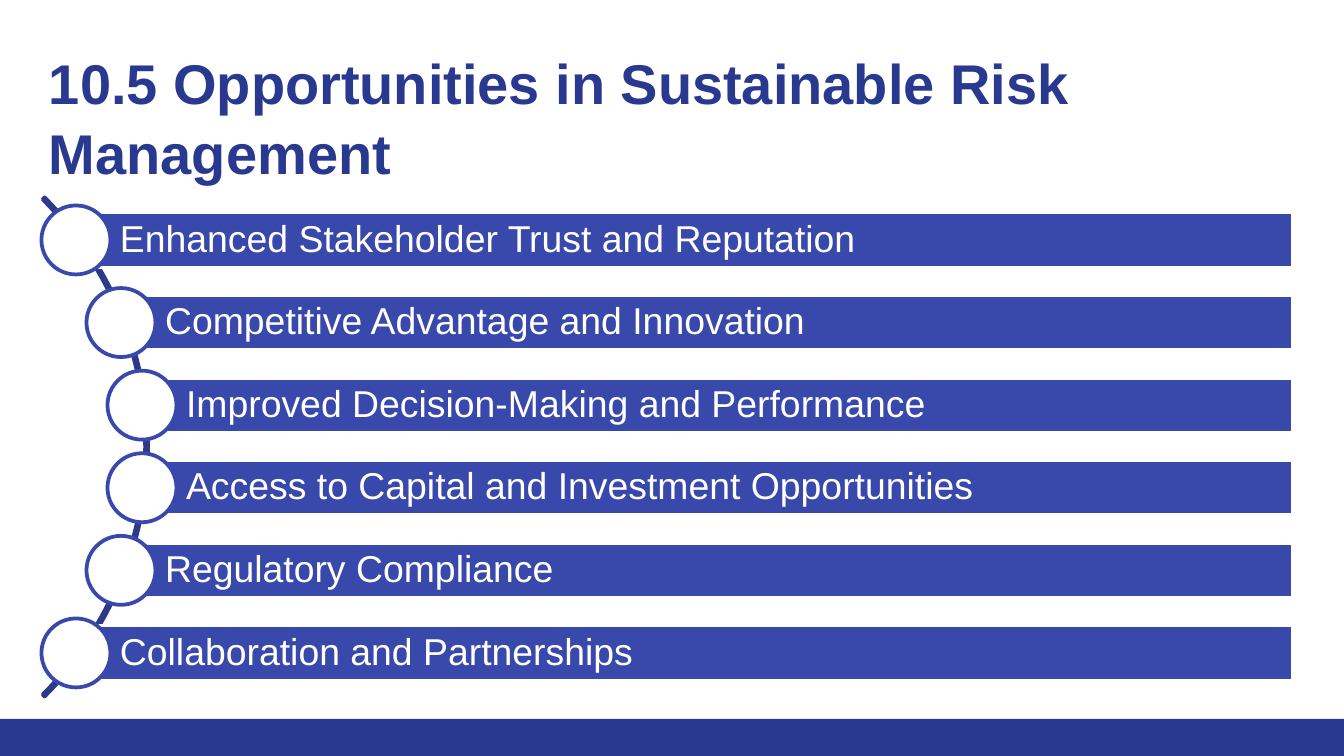
from pptx import Presentation
from pptx.dml.color import RGBColor
from pptx.enum.shapes import MSO_SHAPE
from pptx.enum.text import MSO_ANCHOR, MSO_AUTO_SIZE, PP_ALIGN
from pptx.util import Emu, Pt

RECT, OVAL, ARC = MSO_SHAPE.RECTANGLE, MSO_SHAPE.OVAL, MSO_SHAPE.BLOCK_ARC
TOP, MIDDLE = MSO_ANCHOR.TOP, MSO_ANCHOR.MIDDLE
LEFT = PP_ALIGN.LEFT
NO_FIT = MSO_AUTO_SIZE.NONE

NAVY = RGBColor(0x2A, 0x39, 0x90)
ARC_BLUE = RGBColor(0x2E, 0x3A, 0x89)
BLUE = RGBColor(0x39, 0x49, 0xAB)
WHITE = RGBColor(0xFF, 0xFF, 0xFF)

FONT = "Arial"
EMU_PER_PX = 914400 / 134.4
WIDTH, HEIGHT = 1344, 756

TITLE = "10.5 Opportunities in Sustainable Risk Management"
OPPORTUNITIES = [
    ("Enhanced Stakeholder Trust and Reputation", 76),
    ("Competitive Advantage and Innovation", 121),
    ("Improved Decision-Making and Performance", 142),
    ("Access to Capital and Investment Opportunities", 142),
    ("Regulatory Compliance", 121),
    ("Collaboration and Partnerships", 76),
]
FIRST_CENTER, LAST_CENTER = 240, 653
BAR_RIGHT, BAR_HEIGHT = 1293, 55
CIRCLE = 69


def px(n):
    return Emu(round(n * EMU_PER_PX))


def add_shape(s, kind, x, y, w, h, fill, line=None):
    sp = s.shapes.add_shape(kind, px(x), px(y), px(w), px(h))
    sp.shadow.inherit = False
    sp.fill.solid()
    sp.fill.fore_color.rgb = fill
    if line is None:
        sp.line.fill.background()
    else:
        sp.line.color.rgb = line
        sp.line.width = Pt(2)
    return sp


def set_text(sp, text, size, color, bold, anchor, margins, spacing):
    tf = sp.text_frame
    tf.word_wrap = True
    tf.auto_size = NO_FIT
    tf.vertical_anchor = anchor
    tf.margin_left, tf.margin_top, tf.margin_right, tf.margin_bottom = map(px, margins)
    p = tf.paragraphs[0]
    p.text = text
    p.alignment = LEFT
    p.line_spacing = spacing
    p.font.name = FONT
    p.font.size = Pt(size)
    p.font.bold = bold
    p.font.color.rgb = color


def add_title(s):
    sp = s.shapes.title
    sp.left, sp.top, sp.width, sp.height = map(px, (36, 27, 1236, 120))
    set_text(sp, TITLE, 30, NAVY, True, TOP, (13, 19, 13, 13), 1.04)


def add_arc(s):
    sp = add_shape(s, ARC, -558, 94, 706, 706, ARC_BLUE, ARC_BLUE)
    for i, value in enumerate((189, 27, 0.004)):
        sp.adjustments[i] = value


def add_opportunity(s, text, x, y):
    bar = add_shape(s, RECT, x, y - BAR_HEIGHT / 2, BAR_RIGHT - x, BAR_HEIGHT, BLUE, WHITE)
    set_text(bar, text, 20, WHITE, False, MIDDLE, (44, 8, 8, 8), 0.9)
    add_shape(s, OVAL, x - CIRCLE / 2, y - CIRCLE / 2, CIRCLE, CIRCLE, WHITE, BLUE)


def main():
    prs = Presentation()
    prs.slide_width, prs.slide_height = px(WIDTH), px(HEIGHT)
    s = prs.slides.add_slide(prs.slide_layouts[5])
    add_shape(s, RECT, 0, 719, WIDTH, 37, NAVY)
    add_title(s)
    add_arc(s)
    step = (LAST_CENTER - FIRST_CENTER) / (len(OPPORTUNITIES) - 1)
    for i, (text, x) in enumerate(OPPORTUNITIES):
        add_opportunity(s, text, x, FIRST_CENTER + i * step)
    prs.save("out.pptx")


if __name__ == "__main__":
    main()
